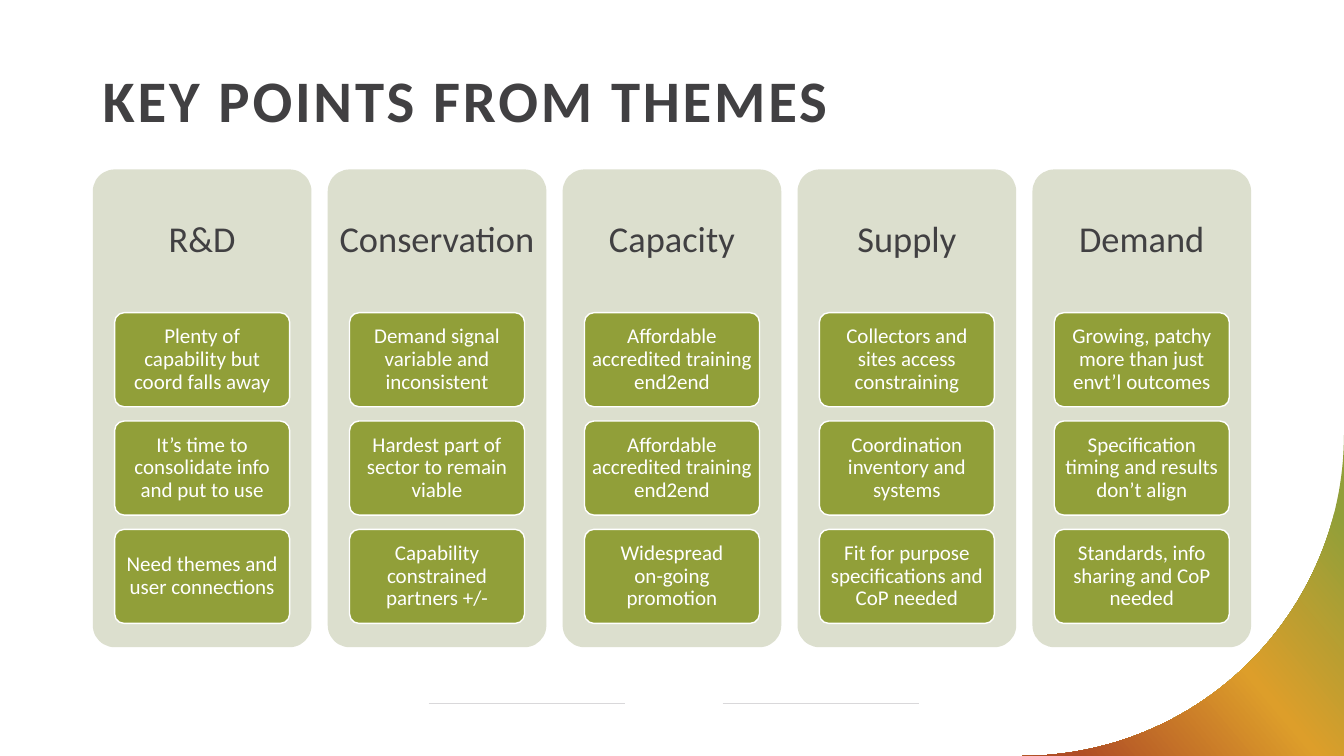
from copy import deepcopy
from math import cos, pi, sin

from pptx import Presentation
from pptx.dml.color import RGBColor
from pptx.enum.shapes import MSO_CONNECTOR, MSO_SHAPE
from pptx.enum.text import MSO_ANCHOR as Anchor, PP_ALIGN as Align
from pptx.oxml.ns import qn
from pptx.util import Cm, Pt

COLORS = {
    "ink": "414042",
    "panel": "DCDFCE",
    "green": "919F39",
    "amber": "DD9E2A",
    "rust": "AF4C26",
    "rule": "D9D8DA",
    "white": "FFFFFF",
}

THEMES = {
    "R&D": [
        "Plenty of capability but coord falls away",
        "It’s time to consolidate info and put to use",
        "Need themes and user connections",
    ],
    "Conservation": [
        "Demand signal variable and inconsistent",
        "Hardest part of sector to remain viable",
        "Capability constrained partners +/-",
    ],
    "Capacity": [
        "Affordable accredited training end2end",
        "Affordable accredited training end2end",
        "Widespread\von-going promotion",
    ],
    "Supply": [
        "Collectors and sites access constraining",
        "Coordination inventory and systems",
        "Fit for purpose specifications and CoP needed",
    ],
    "Demand": [
        "Growing, patchy more than just envt’l outcomes",
        "Specification timing and results don’t align",
        "Standards, info sharing and CoP needed",
    ],
}


def rgb(name):
    return RGBColor.from_string(COLORS[name])


def write(shape, text, size, color, inset_x, inset_y, align=Align.CENTER, anchor=Anchor.MIDDLE):
    """Fill the shape with one paragraph and return its first run."""
    frame = shape.text_frame
    frame.word_wrap = True
    frame.vertical_anchor = anchor
    frame.margin_left = frame.margin_right = Cm(inset_x)
    frame.margin_top = frame.margin_bottom = Cm(inset_y)
    frame.text = text
    paragraph = frame.paragraphs[0]
    paragraph.alignment = align
    paragraph.line_spacing = 0.9
    for run in paragraph.runs:
        run.font.name = "Calibri"
        run.font.size = Pt(size)
        run.font.color.rgb = rgb(color)
    return paragraph.runs[0]


SLIDE_W, SLIDE_H = 33.87, 19.05
prs = Presentation()
prs.slide_width, prs.slide_height = Cm(SLIDE_W), Cm(SLIDE_H)
slide = prs.slides.add_slide(prs.slide_layouts[6])
shapes = slide.shapes

# Footer rules
for rule_left in (10.8, 18.21):
    rule = shapes.add_connector(
        MSO_CONNECTOR.STRAIGHT, Cm(rule_left), Cm(17.72), Cm(rule_left + 4.95), Cm(17.72)
    )
    rule.line.color.rgb = rgb("rule")
    rule.line.width = Pt(0.5)
    rule._element.spPr.add_effectLst() if hasattr(rule._element.spPr, "add_effectLst") else \
        rule._element.spPr.append(rule._element.makeelement(qn("a:effectLst"), {}))

# Corner sweep: the area outside a quarter circle
RADIUS, STEPS = 8.1, 60
arc = [
    (
        Cm(SLIDE_W - RADIUS + RADIUS * cos(step / STEPS * pi / 2)),
        Cm(SLIDE_H - RADIUS + RADIUS * sin(step / STEPS * pi / 2)),
    )
    for step in range(STEPS + 1)
]
outline = shapes.build_freeform(*arc[0])
outline.add_line_segments(arc[1:] + [(Cm(SLIDE_W), Cm(SLIDE_H))], close=True)
sweep = outline.convert_to_shape()
sweep.shadow.inherit = False
sweep.line.fill.background()
sweep.fill.gradient()
sweep.fill.gradient_angle = 220
stop_list = sweep._element.spPr.find(qn("a:gradFill")).find(qn("a:gsLst"))
stop_list.append(deepcopy(stop_list[-1]))
sweep_stops = [(0.12, "green"), (0.5, "amber"), (0.91, "rust")]
for stop, (position, color) in zip(sweep.fill.gradient_stops, sweep_stops):
    stop.position = position
    stop.color.rgb = rgb(color)

# Title
title = shapes.add_textbox(Cm(2.34), Cm(1.68), Cm(29.2), Cm(2.59))
heading = write(title, "KEY POINTS FROM THEMES", 42, "ink", 0.25, 0.13, Align.LEFT, Anchor.TOP)
heading.font.bold = True
heading.font._element.set("spc", "200")

# One panel per theme, with its key points stacked below the name
PANEL_LEFT, PANEL_TOP, PANEL_W, PANEL_H, PANEL_PITCH = 2.34, 4.27, 5.51, 12.04, 5.92
CARD_TOP, CARD_W, CARD_H, CARD_PITCH = 7.88, 4.41, 2.37, 2.73

for column, (theme, points) in enumerate(THEMES.items()):
    left = PANEL_LEFT + column * PANEL_PITCH
    panel = shapes.add_shape(
        MSO_SHAPE.ROUNDED_RECTANGLE, Cm(left), Cm(PANEL_TOP), Cm(PANEL_W), Cm(PANEL_H)
    )
    panel.adjustments[0] = 0.1
    panel.shadow.inherit = False
    panel.fill.solid()
    panel.fill.fore_color.rgb = rgb("panel")
    panel.line.fill.background()

    theme_name = shapes.add_textbox(Cm(left), Cm(PANEL_TOP), Cm(PANEL_W), Cm(CARD_TOP - PANEL_TOP))
    write(theme_name, theme, 26, "ink", 0.2, 0.28)

    for row, point in enumerate(points):
        card = shapes.add_shape(
            MSO_SHAPE.ROUNDED_RECTANGLE,
            Cm(left + (PANEL_W - CARD_W) / 2),
            Cm(CARD_TOP + row * CARD_PITCH),
            Cm(CARD_W),
            Cm(CARD_H),
        )
        card.adjustments[0] = 0.1
        card.shadow.inherit = False
        card.fill.solid()
        card.fill.fore_color.rgb = rgb("green")
        card.line.color.rgb = rgb("white")
        card.line.width = Pt(1)
        write(card, point, 15, "white", 0.1, 0.07)

prs.save("out.pptx")
